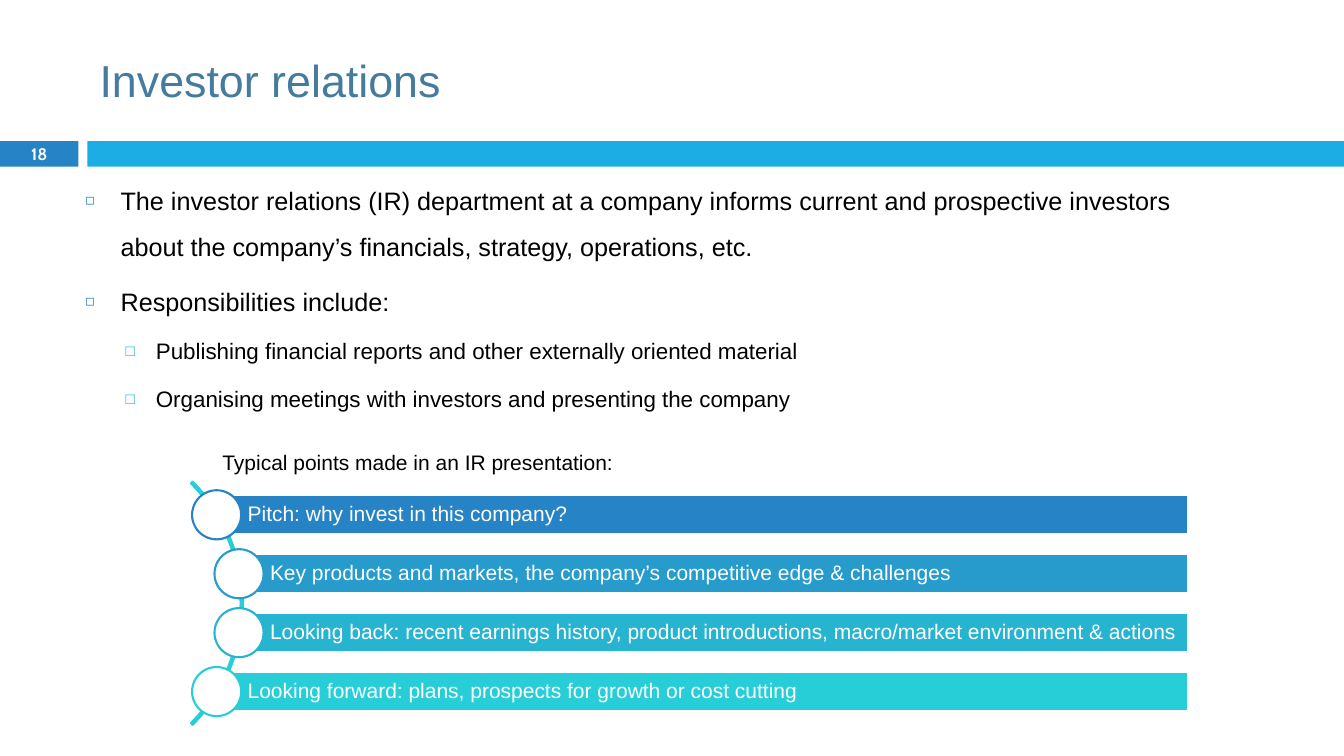
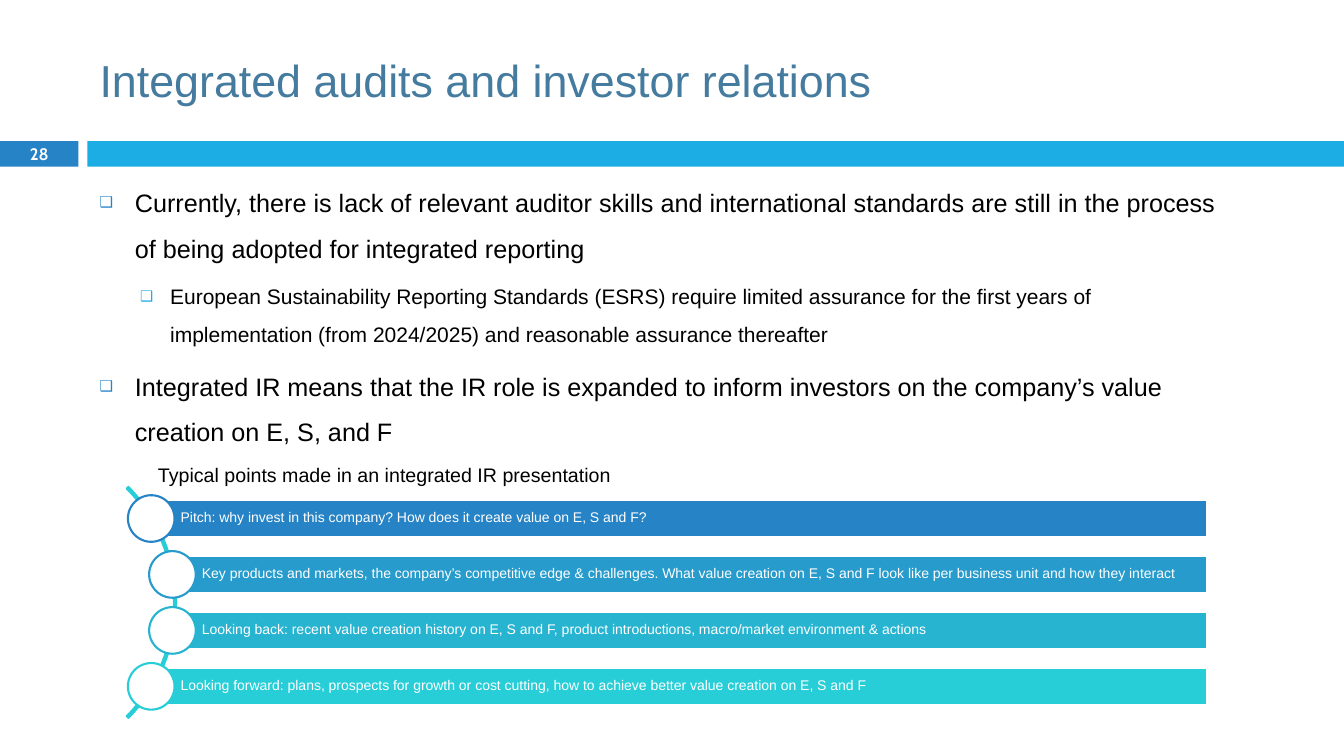
"""Build two investor relations slides with bullet lists and curved step lists."""
from dataclasses import dataclass
from typing import Any

from lxml import etree
from pptx import Presentation
from pptx.dml.color import RGBColor
from pptx.enum.shapes import MSO_SHAPE
from pptx.enum.text import MSO_ANCHOR, PP_ALIGN
from pptx.oxml.ns import qn
from pptx.util import Cm, Pt

RECTANGLE, OVAL, BLOCK_ARC = MSO_SHAPE.RECTANGLE, MSO_SHAPE.OVAL, MSO_SHAPE.BLOCK_ARC
TOP, MIDDLE = MSO_ANCHOR.TOP, MSO_ANCHOR.MIDDLE
LEFT, CENTER = PP_ALIGN.LEFT, PP_ALIGN.CENTER

SLIDE_WIDTH, SLIDE_HEIGHT = 33.87, 19.05
BAND_TOP, BAND_HEIGHT = 3.56, 0.64
NUMBER_WIDTH, BAND_LEFT = 1.98, 2.2
COLORS = {
    "blue": "2683C6",
    "sky": "1CADE4",
    "title": "457B9E",
    "text": "000000",
    "white": "FFFFFF",
    "step 1": "2683C6",
    "step 2": "269BCC",
    "step 3": "27B4D1",
    "step 4": "27CED7",
}
TITLE_FONT = {"name": "Arial", "size": Pt(32)}
NUMBER_FONT = {"name": "Cabin", "size": Pt(11.9), "bold": True}


@dataclass(frozen=True)
class Box:
    """A rectangle in centimetres."""
    left: float
    top: float
    width: float
    height: float

    def lengths(self) -> tuple[Cm, ...]:
        """Return left, top, width and height as lengths."""
        return Cm(self.left), Cm(self.top), Cm(self.width), Cm(self.height)


@dataclass(frozen=True)
class BulletStyle:
    """The look of one outline level."""
    margin: float
    hanging: float
    space_before: float
    color: str
    percent: int


@dataclass(frozen=True)
class Bullet:
    """One bulleted paragraph."""
    text: str
    size: float
    mark: str
    level: int = 0


@dataclass(frozen=True)
class StepList:
    """Four bars along an arc, scaled by the height of a bar."""
    left: float
    right: float
    middle: float
    bar_height: float
    size: float
    texts: tuple[str, ...]


@dataclass(frozen=True)
class Caption:
    """The heading above a step list."""
    text: str
    box: Box
    size: float
    alignment: Any


@dataclass(frozen=True)
class Page:
    """The content of one slide."""
    number: str
    title: str
    body: Box
    bullets: tuple[Bullet, ...]
    caption: Caption
    steps: StepList


BULLET_STYLES = (
    BulletStyle(0.89, 0.89, 7, "blue", 60),
    BulletStyle(1.78, 0.76, 5.5, "sky", 70),
)
PAGES = (
    Page(
        "18", "Investor relations", Box(1.9, 4.17, 29.06, 12.9),
        (
            Bullet("The investor relations (IR) department at a company informs current and "
                   "prospective investors about the company’s financials, strategy, operations, etc.",
                   18, "◻"),
            Bullet("Responsibilities include:", 18, "◻"),
            Bullet("Publishing financial reports and other externally oriented material", 16, "□", 1),
            Bullet("Organising meetings with investors and presenting the company", 16, "□", 1),
        ),
        Caption("Typical points made in an IR presentation:", Box(5.13, 11.2, 10.8, 0.89), 15, CENTER),
        StepList(5.46, 29.95, 15.2, 0.99, 15, (
            "Pitch: why invest in this company?",
            "Key products and markets, the company’s competitive edge & challenges",
            "Looking back: recent earnings history, product introductions, "
            "macro/market environment & actions",
            "Looking forward: plans, prospects for growth or cost cutting",
        )),
    ),
    Page(
        "28", "Integrated audits and investor relations", Box(2.26, 4.22, 29.06, 12.9),
        (
            Bullet("Currently, there is lack of relevant auditor skills and international standards "
                   "are still in the process of being adopted for integrated reporting", 18, "❑"),
            Bullet("European Sustainability Reporting Standards (ESRS) require limited assurance for "
                   "the first years of implementation (from 2024/2025) and reasonable assurance "
                   "thereafter", 15, "❑", 1),
            Bullet("Integrated IR means that the IR role is expanded to inform investors on the "
                   "company’s value creation on E, S, and F", 18, "❑"),
        ),
        Caption("Typical points made in an integrated IR presentation",
                Box(3.73, 11.53, 12.6, 0.86), 14, LEFT),
        StepList(3.81, 30.43, 15.18, 0.94, 10, (
            "Pitch: why invest in this company? How does it create value on E, S and F?",
            "Key products and markets, the company’s competitive edge & challenges. What value "
            "creation on E, S and F look like per business unit and how they interact",
            "Looking back: recent value creation history on E, S and F, product introductions, "
            "macro/market environment & actions",
            "Looking forward: plans, prospects for growth or cost cutting, how to achieve better "
            "value creation on E, S and F",
        )),
    ),
)


def apply_format(target: Any, values: dict[str, Any]) -> None:
    """Set each named attribute on the target."""
    for name, value in values.items():
        setattr(target, name, value)


def rgb(color: str) -> RGBColor:
    """Look up a named colour."""
    return RGBColor.from_string(COLORS[color])


def write(paragraph: Any, text: str, color: str, font: dict[str, Any], **layout: Any) -> None:
    """Fill a paragraph with one formatted run."""
    run = paragraph.add_run()
    run.text = text
    apply_format(run.font, font)
    run.font.color.rgb = rgb(color)
    apply_format(paragraph, layout)


def add_shape(slide: Any, kind: Any, box: Box, fill: str | None = None, line: str | None = None) -> Any:
    """Add a flat preset shape."""
    shape = slide.shapes.add_shape(kind, *box.lengths())
    shape.shadow.inherit = False
    if fill:
        shape.fill.solid()
        shape.fill.fore_color.rgb = rgb(fill)
    else:
        shape.fill.background()
    if line:
        shape.line.color.rgb = rgb(line)
        shape.line.width = Pt(1.5)
    else:
        shape.line.fill.background()
    return shape


def add_text_frame(slide: Any, box: Box, anchor: Any = TOP) -> Any:
    """Add a wrapping text box and return its frame."""
    frame = slide.shapes.add_textbox(*box.lengths()).text_frame
    apply_format(frame, {"word_wrap": True, "vertical_anchor": anchor})
    return frame


def add_bullet_mark(paragraph: Any, style: BulletStyle, mark: str) -> None:
    """Give a paragraph its hanging indent and bullet."""
    properties = paragraph._p.get_or_add_pPr()
    properties.set("marL", str(Cm(style.margin)))
    properties.set("indent", str(-Cm(style.hanging)))
    color = etree.SubElement(properties, qn("a:buClr"))
    etree.SubElement(color, qn("a:srgbClr"), val=COLORS[style.color])
    etree.SubElement(properties, qn("a:buSzPct"), val=str(style.percent * 1000))
    etree.SubElement(properties, qn("a:buFont"), typeface="Arial")
    etree.SubElement(properties, qn("a:buChar"), char=mark)


def add_header(slide: Any, page: Page) -> None:
    """Draw the bands, slide number and title."""
    number_box = Box(0, BAND_TOP, NUMBER_WIDTH, BAND_HEIGHT)
    number_band = add_shape(slide, RECTANGLE, number_box, "blue")
    frame = number_band.text_frame
    apply_format(frame, {"vertical_anchor": MIDDLE, "margin_top": 0, "margin_bottom": 0})
    write(frame.paragraphs[0], page.number, "white", NUMBER_FONT, alignment=CENTER)
    add_shape(slide, RECTANGLE, Box(BAND_LEFT, BAND_TOP, SLIDE_WIDTH - BAND_LEFT, BAND_HEIGHT), "sky")
    title = add_text_frame(slide, Box(2.26, 0.64, 30.2, 2.74), MIDDLE)
    write(title.paragraphs[0], page.title, "title", TITLE_FONT)


def add_bullets(slide: Any, box: Box, bullets: tuple[Bullet, ...]) -> None:
    """Write the bulleted body text."""
    frame = add_text_frame(slide, box)
    for index, bullet in enumerate(bullets):
        paragraph = frame.add_paragraph() if index else frame.paragraphs[0]
        style = BULLET_STYLES[bullet.level]
        write(paragraph, bullet.text, "text", {"name": "Arial", "size": Pt(bullet.size)},
              level=bullet.level, line_spacing=1.5, space_before=Pt(style.space_before))
        add_bullet_mark(paragraph, style, bullet.mark)


def add_steps(slide: Any, steps: StepList) -> None:
    """Draw the arc, then each bar with its circle."""
    height = steps.bar_height
    diameter, circle, pitch = 8.75 * height, 1.25 * height, 1.5 * height
    arc_box = Box(steps.left - 8.08 * height, steps.middle - diameter / 2, diameter, diameter)
    arc = add_shape(slide, BLOCK_ARC, arc_box, line="step 4")
    for index, value in enumerate((189, 27, 0.007)):
        arc.adjustments[index] = value
    last = len(steps.texts) - 1
    margin = Cm(0.09 * height)
    for index, text in enumerate(steps.texts):
        color = f"step {index + 1}"
        left = steps.left + (0.57 * height if 0 < index < last else 0)
        center = steps.middle + (index - last / 2) * pitch
        bar_box = Box(left, center - height / 2, steps.right - left, height)
        bar = add_shape(slide, RECTANGLE, bar_box, color, "white")
        apply_format(bar.text_frame, {
            "word_wrap": True, "vertical_anchor": MIDDLE, "margin_left": Cm(0.79 * height),
            "margin_right": margin, "margin_top": margin, "margin_bottom": margin,
        })
        write(bar.text_frame.paragraphs[0], text, "white", {"name": "Arial", "size": Pt(steps.size)},
              alignment=LEFT, line_spacing=0.9)
        circle_box = Box(left - circle / 2, center - circle / 2, circle, circle)
        add_shape(slide, OVAL, circle_box, "white", color)


def add_page(presentation: Any, page: Page) -> None:
    """Add one complete slide."""
    slide = presentation.slides.add_slide(presentation.slide_layouts[6])
    add_header(slide, page)
    add_bullets(slide, page.body, page.bullets)
    add_steps(slide, page.steps)
    caption = page.caption
    frame = add_text_frame(slide, caption.box)
    write(frame.paragraphs[0], caption.text, "text", {"name": "Arial", "size": Pt(caption.size)},
          alignment=caption.alignment)


def main() -> None:
    """Build and save the presentation."""
    presentation = Presentation()
    apply_format(presentation, {"slide_width": Cm(SLIDE_WIDTH), "slide_height": Cm(SLIDE_HEIGHT)})
    for page in PAGES:
        add_page(presentation, page)
    presentation.save("out.pptx")


if __name__ == "__main__":
    main()
